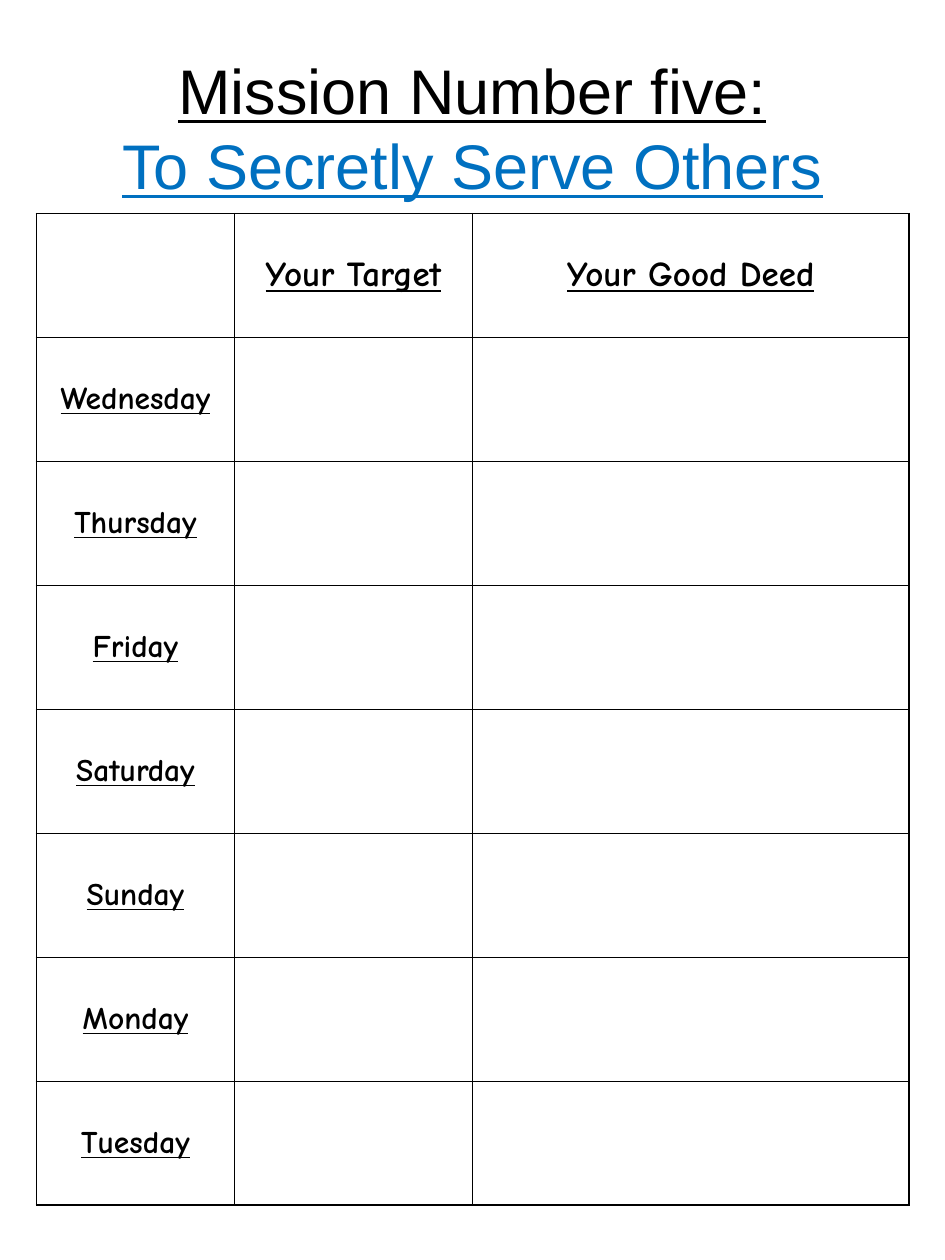
from lxml.etree import SubElement
from pptx import Presentation
from pptx.dml.color import RGBColor
from pptx.enum.text import MSO_ANCHOR, MSO_AUTO_SIZE, PP_ALIGN
from pptx.oxml.ns import qn
from pptx.util import Pt

COLORS = {"ink": "000000", "mission": "0070C0"}
HEADINGS = ["", "Your Target", "Your Good Deed"]
DAYS = ["Wednesday", "Thursday", "Friday", "Saturday", "Sunday", "Monday", "Tuesday"]
COLUMN_WIDTHS = [113.2, 136, 249.6]
ROW_HEIGHT = 70.85


def write(para, text, size, font, color="ink", bold=False):
    """Fill a paragraph with one centred, underlined span."""
    para.alignment = PP_ALIGN.CENTER
    span = para.add_run()
    span.text = text
    span.font.size = Pt(size)
    span.font.name = font
    span.font.bold = bold
    span.font.underline = True
    span.font.color.rgb = RGBColor.from_string(COLORS[color])


def add_title(page):
    title = page.shapes.title
    title.left, title.top, title.width, title.height = Pt(0), Pt(23.8), Pt(540), Pt(94.4)
    frame = title.text_frame
    frame.word_wrap = True
    frame.auto_size = MSO_AUTO_SIZE.NONE
    frame.vertical_anchor = MSO_ANCHOR.TOP
    frame.margin_top = Pt(5.75)
    write(frame.paragraphs[0], "Mission Number five:", 36, "Arial")
    write(frame.add_paragraph(), "To Secretly Serve Others", 36, "Arial", color="mission")
    for para in frame.paragraphs:
        para.line_spacing = Pt(43)
        para.space_before = Pt(0)


def draw_borders(cell):
    properties = cell._tc.get_or_add_tcPr()
    for position, side in enumerate(("a:lnL", "a:lnR", "a:lnT", "a:lnB")):
        line = properties.makeelement(qn(side), {"w": str(Pt(1))})
        properties.insert(position, line)
        fill = SubElement(line, qn("a:solidFill"))
        SubElement(fill, qn("a:srgbClr"), val=COLORS["ink"])


def add_planner(page):
    rows = [HEADINGS] + [[day, "", ""] for day in DAYS]
    table = page.shapes.add_table(
        len(rows), len(HEADINGS), Pt(20.8), Pt(122),
        Pt(sum(COLUMN_WIDTHS)), Pt(ROW_HEIGHT * len(rows)),
    ).table
    table.first_row = False
    table.horz_banding = False
    for column, width in zip(table.columns, COLUMN_WIDTHS):
        column.width = Pt(width)
    for row_number, texts in enumerate(rows):
        table.rows[row_number].height = Pt(ROW_HEIGHT)
        for column_number, text in enumerate(texts):
            cell = table.cell(row_number, column_number)
            cell.fill.background()
            cell.vertical_anchor = MSO_ANCHOR.MIDDLE
            draw_borders(cell)
            if text:
                size = 20 if row_number == 0 else 18
                write(cell.text_frame.paragraphs[0], text, size, "Comic Neue", bold=True)


def main():
    deck = Presentation()
    deck.slide_width, deck.slide_height = Pt(540), Pt(720)
    page = deck.slides.add_slide(deck.slide_layouts[5])
    add_title(page)
    add_planner(page)
    deck.save("out.pptx")


if __name__ == "__main__":
    main()
